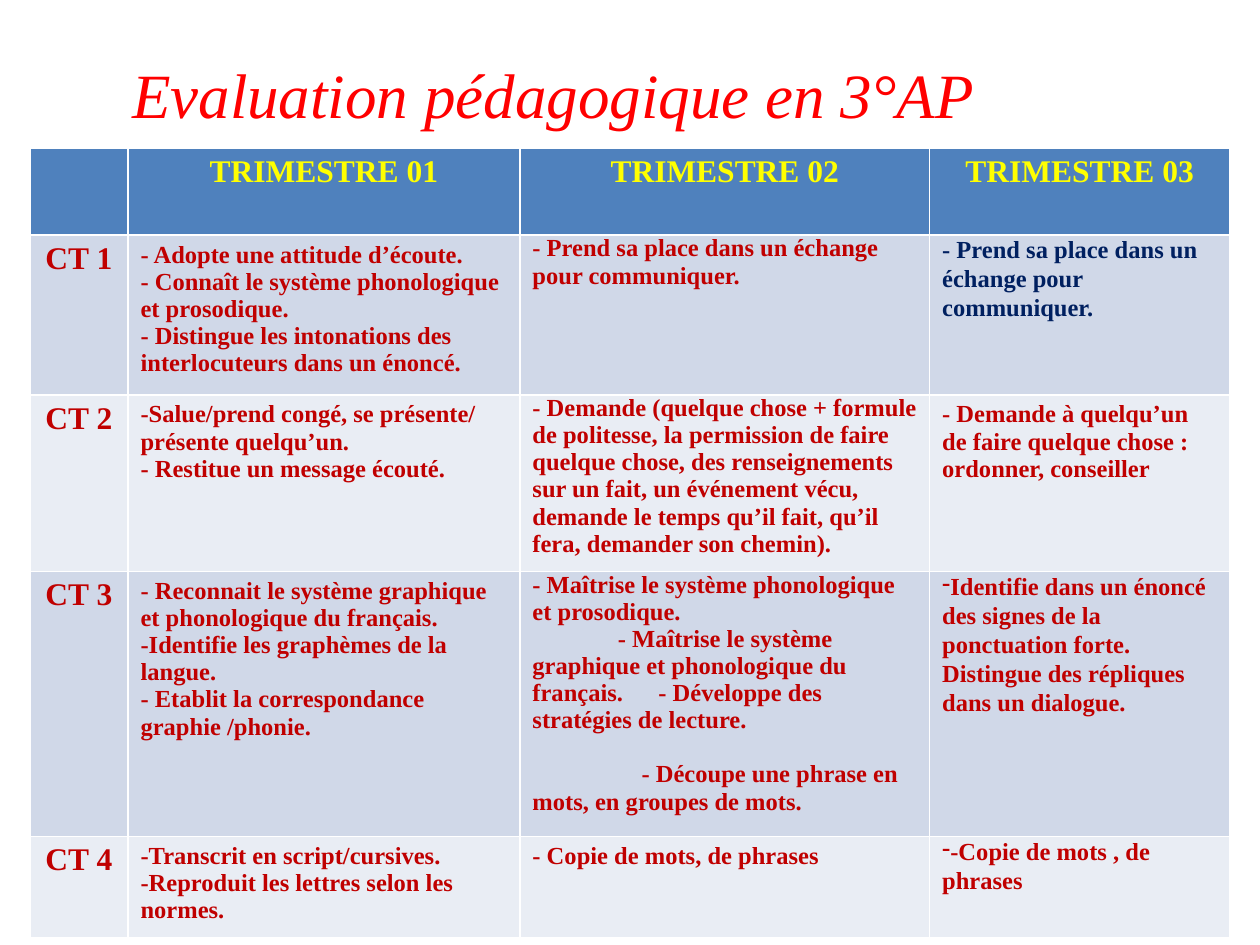
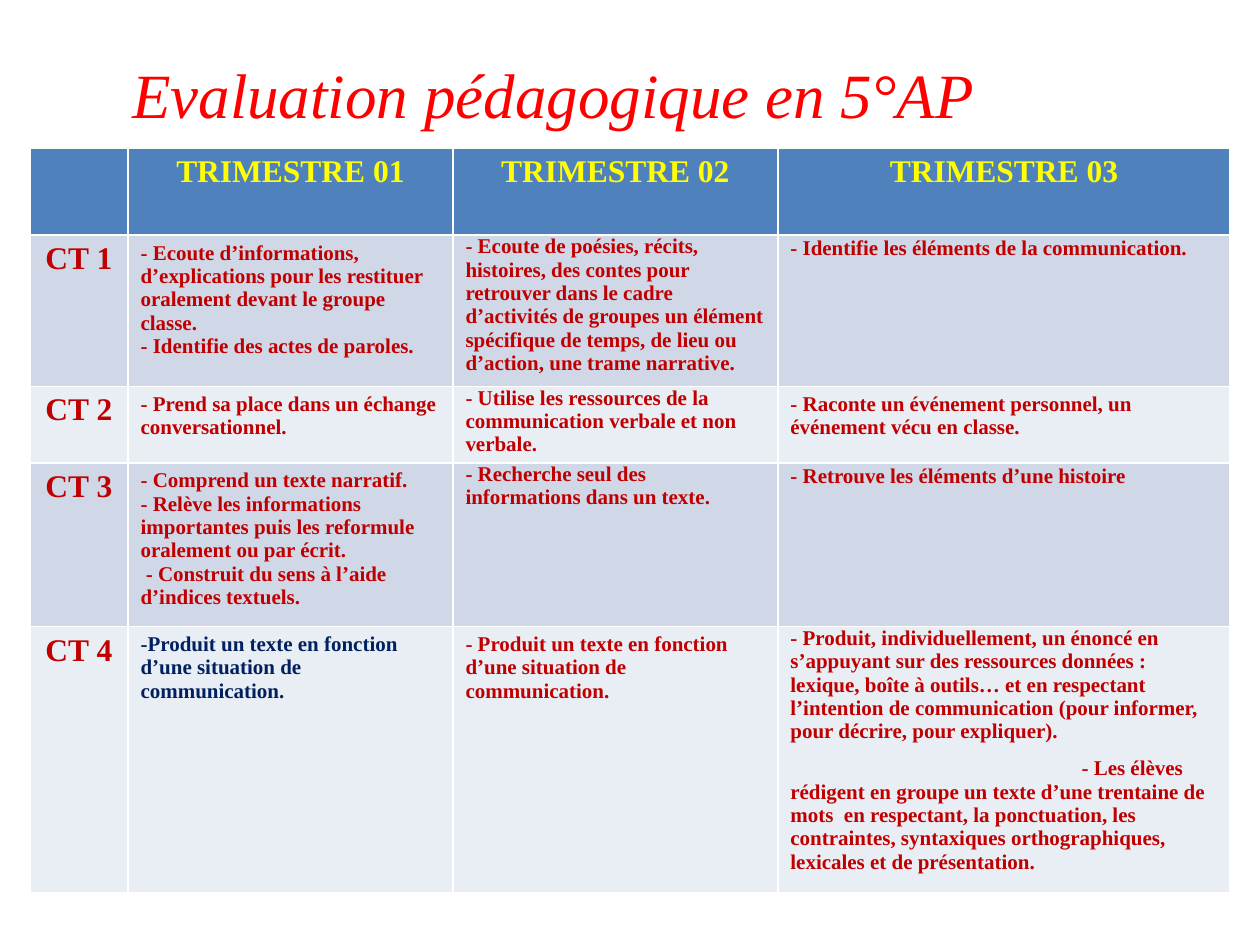
from dataclasses import dataclass

from lxml.etree import SubElement
from pptx import Presentation
from pptx.dml.color import RGBColor
from pptx.enum.text import MSO_AUTO_SIZE as AutoSize, PP_ALIGN as Align
from pptx.oxml.ns import qn
from pptx.util import Cm, Pt

FONT = "Times New Roman"
TITLE_RED = "FF0000"
HEADER_BLUE = "4F81BD"
HEADER_YELLOW = "FFFF00"
BODY_RED = "C00000"
NAVY = "002060"
BANDS = ("D0D8E8", "E9EDF4")
LABEL_SIZE = 18
TABLE_LEFT, TABLE_TOP = 0.6, 2.98
HEADERS = ("", "TRIMESTRE 01", "TRIMESTRE 02", "TRIMESTRE 03")


@dataclass(frozen=True)
class Line:
    """One paragraph; indent and tab are in cm, before is in points."""
    text: str
    indent: float = 0
    before: float = 0
    tab: float = 0
    dash: bool = False


@dataclass(frozen=True)
class Skill:
    """The skills of one term; tight means no space above the text."""
    lines: tuple[Line, ...]
    tight: bool = False
    spacing: float = 1.0
    color: str = BODY_RED


@dataclass(frozen=True)
class Level:
    title: str
    size: int
    widths: tuple[float, ...]
    heights: tuple[float, ...]
    skills: tuple[tuple[Skill, ...], ...]


def skill(*lines: str | Line, tight: bool = False, spacing: float = 1.0,
          color: str = BODY_RED) -> Skill:
    paragraphs = tuple(Line(line) if isinstance(line, str) else line for line in lines)
    return Skill(paragraphs, tight, spacing, color)


LEVELS = (
    Level(
        "Evaluation pédagogique en 3°AP", 14,
        (1.98, 7.9, 8.26, 6.05), (1.76, 3.22, 3.56, 5.34, 2.02),
        (
            (
                skill("- Adopte une attitude d’écoute.",
                      "- Connaît le système phonologique et prosodique.",
                      "- Distingue les intonations des interlocuteurs dans un énoncé."),
                skill("- Prend sa place dans un échange pour communiquer.", tight=True),
                skill("- Prend sa place dans un échange pour communiquer.",
                      tight=True, spacing=1.07, color=NAVY),
            ),
            (
                skill("-Salue/prend congé, se présente/ présente quelqu’un.",
                      "- Restitue un message écouté."),
                skill("- Demande (quelque chose + formule de politesse, la permission de "
                      "faire quelque chose, des renseignements sur un fait, un événement "
                      "vécu, demande le temps qu’il fait, qu’il fera, demander son chemin).",
                      tight=True),
                skill("- Demande à quelqu’un de faire quelque chose : ordonner, conseiller"),
            ),
            (
                skill("- Reconnait le système graphique et phonologique du français.",
                      "-Identifie les graphèmes de la langue.",
                      "- Etablit la correspondance graphie /phonie."),
                skill("- Maîtrise le système phonologique et prosodique.",
                      Line("- Maîtrise le système graphique et phonologique du français."
                           "\t- Développe des stratégies de lecture.", indent=1.72, tab=6.02),
                      Line("- Découpe une phrase en mots, en groupes de mots.",
                           indent=2.2, before=15.5),
                      tight=True),
                skill(Line("Identifie dans un énoncé des signes de la ponctuation forte. "
                           "Distingue des répliques dans un dialogue.", dash=True),
                      tight=True, spacing=1.07),
            ),
            (
                skill("-Transcrit en script/cursives.",
                      "-Reproduit les lettres selon les normes."),
                skill("- Copie de mots, de phrases"),
                skill(Line("-Copie de mots , de phrases", dash=True),
                      tight=True, spacing=1.07),
            ),
        ),
    ),
    Level(
        "Evaluation pédagogique en 5°AP", 12,
        (1.98, 6.55, 6.55, 9.12), (1.76, 3.05, 1.54, 3.3, 5.33),
        (
            (
                skill("- Ecoute d’informations, d’explications pour les restituer oralement "
                      "devant le groupe classe.",
                      "- Identifie des actes de paroles."),
                skill("- Ecoute de poésies, récits, histoires, des contes pour retrouver dans "
                      "le cadre d’activités de groupes un élément spécifique de temps, de "
                      "lieu ou d’action, une trame narrative.", tight=True),
                skill("- Identifie les éléments de la communication.",
                      tight=True, spacing=1.07),
            ),
            (
                skill("- Prend sa place dans un échange conversationnel."),
                skill("- Utilise les ressources de la communication verbale et non verbale.",
                      tight=True),
                skill("- Raconte un événement personnel, un événement vécu en classe."),
            ),
            (
                skill("- Comprend un texte narratif.",
                      "- Relève les informations importantes puis les reformule oralement "
                      "ou par écrit.",
                      " - Construit du sens à l’aide d’indices textuels."),
                skill("- Recherche seul des informations dans un texte.", tight=True),
                skill("- Retrouve les éléments d’une histoire", tight=True, spacing=1.07),
            ),
            (
                skill("-Produit un texte en fonction d’une situation de communication.",
                      color=NAVY),
                skill("- Produit un texte en fonction d’une situation de communication."),
                skill("- Produit, individuellement, un énoncé en s’appuyant sur des "
                      "ressources données : lexique, boîte à outils… et en respectant "
                      "l’intention de communication (pour informer, pour décrire, pour "
                      "expliquer).",
                      Line("- Les élèves rédigent en groupe un texte d’une trentaine de mots  "
                           "en respectant, la ponctuation, les contraintes, syntaxiques "
                           "orthographiques, lexicales et de présentation.",
                           indent=5.87, before=8),
                      tight=True),
            ),
        ),
    ),
)


def rgb(color: str) -> RGBColor:
    return RGBColor.from_string(color)


def format_runs(paragraph, size: float, color: str, bold: bool = False,
                italic: bool = False) -> None:
    for run in paragraph.runs:
        font = run.font
        font.name, font.size = FONT, Pt(size)
        font.bold, font.italic = bold, italic
        font.color.rgb = rgb(color)


def lay_out(paragraph, line: Line) -> None:
    """Apply the first-line indent, the gap above, the dash bullet and the tab stop."""
    props = paragraph._p.get_or_add_pPr()
    if line.before:
        paragraph.space_before = Pt(line.before)
    if line.indent:
        props.set("marL", "0")
        props.set("indent", str(Cm(line.indent)))
    if line.dash:
        SubElement(props, qn("a:buChar"), char="-")
    if line.tab:
        stops = SubElement(props, qn("a:tabLst"))
        SubElement(stops, qn("a:tab"), pos=str(Cm(line.tab)), algn="l")


def fill_cell(cell, color: str) -> None:
    cell.fill.solid()
    cell.fill.fore_color.rgb = rgb(color)


def write_label(cell, label: str, color: str) -> None:
    cell.text_frame.text = label
    paragraph = cell.text_frame.paragraphs[0]
    paragraph.alignment = Align.CENTER
    format_runs(paragraph, LABEL_SIZE, color, bold=True)


def write_skill(cell, entry: Skill, size: int) -> None:
    if entry.tight:
        cell.margin_top = cell.margin_bottom = 0
    frame = cell.text_frame
    for index, line in enumerate(entry.lines):
        paragraph = frame.add_paragraph() if index else frame.paragraphs[0]
        paragraph.text = line.text
        if entry.spacing != 1:
            paragraph.line_spacing = entry.spacing
        lay_out(paragraph, line)
        format_runs(paragraph, size, entry.color, bold=True)


def add_title(slide, title: str) -> None:
    frame = slide.shapes.add_textbox(Cm(2.39), Cm(0.99), Cm(17.53), Cm(1.8)).text_frame
    frame.word_wrap = True
    frame.auto_size = AutoSize.SHAPE_TO_FIT_TEXT
    frame.text = title
    frame.paragraphs[0].alignment = Align.CENTER
    format_runs(frame.paragraphs[0], 36, TITLE_RED, italic=True)


def add_skill_table(slide, level: Level) -> None:
    table = slide.shapes.add_table(
        len(level.heights), len(level.widths), Cm(TABLE_LEFT), Cm(TABLE_TOP),
        Cm(sum(level.widths)), Cm(sum(level.heights))).table
    for column, width in zip(table.columns, level.widths):
        column.width = Cm(width)
    for row, height in zip(table.rows, level.heights):
        row.height = Cm(height)
    for column, header in enumerate(HEADERS):
        fill_cell(table.cell(0, column), HEADER_BLUE)
        if header:
            write_label(table.cell(0, column), header, HEADER_YELLOW)
    for row, entries in enumerate(level.skills, start=1):
        for column in range(len(HEADERS)):
            fill_cell(table.cell(row, column), BANDS[(row - 1) % 2])
        write_label(table.cell(row, 0), f"CT {row}", BODY_RED)
        for column, entry in enumerate(entries, start=1):
            write_skill(table.cell(row, column), entry, level.size)


def main() -> None:
    deck = Presentation()
    deck.slide_width, deck.slide_height = Cm(25.4), Cm(19.05)
    for level in LEVELS:
        slide = deck.slides.add_slide(deck.slide_layouts[6])
        add_title(slide, level.title)
        add_skill_table(slide, level)
    deck.save("out.pptx")


if __name__ == "__main__":
    main()
